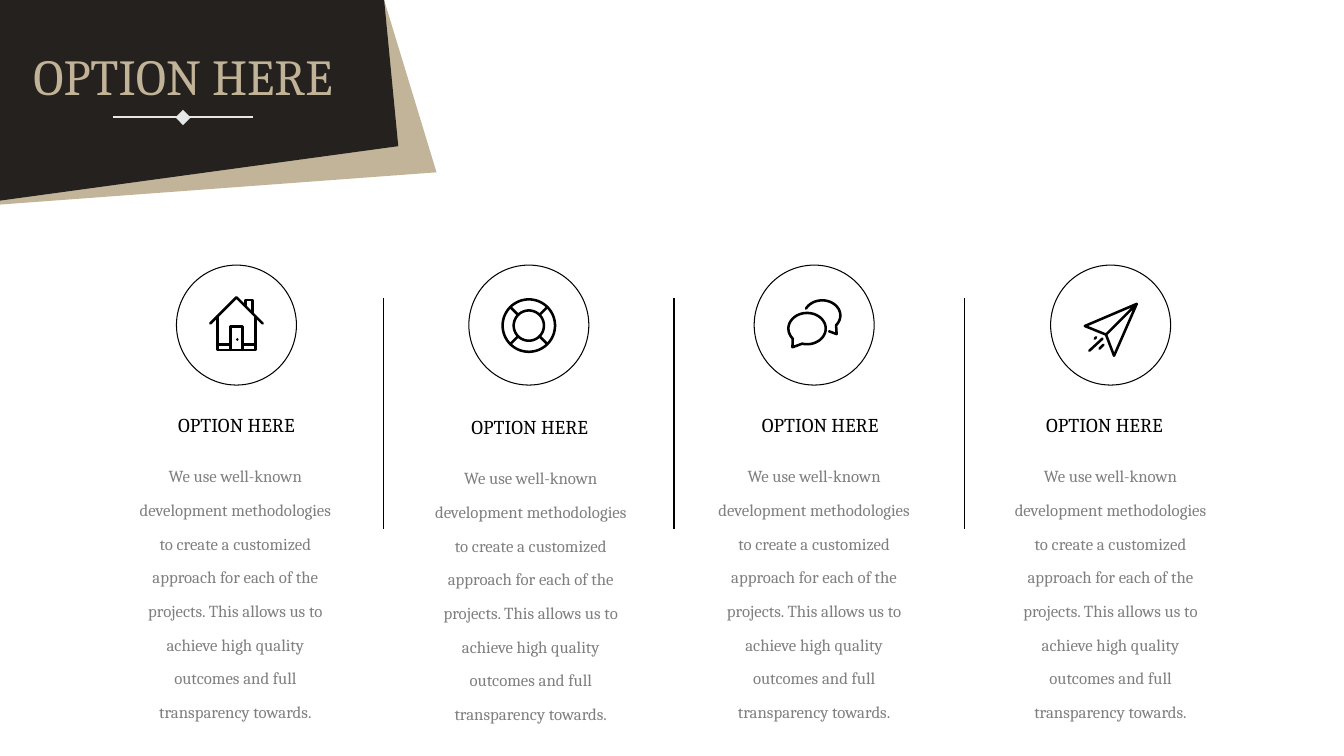
import math

from lxml import etree
from pptx import Presentation
from pptx.dml.color import RGBColor
from pptx.enum.shapes import MSO_CONNECTOR, MSO_SHAPE
from pptx.enum.text import MSO_ANCHOR, PP_ALIGN
from pptx.oxml.ns import qn
from pptx.util import Inches, Pt

STRAIGHT = MSO_CONNECTOR.STRAIGHT
OVAL, DIAMOND = MSO_SHAPE.OVAL, MSO_SHAPE.DIAMOND
TOP, MIDDLE = MSO_ANCHOR.TOP, MSO_ANCHOR.MIDDLE
CENTER = PP_ALIGN.CENTER

# Grid of square cells, 133.3 columns by 75 rows
CELL = Inches(0.1)
COLS, ROWS = 133.3, 75

COLORS = {"white": "FFFFFF", "black": "000000", "dark": "25211E", "sand": "C2B498",
          "title": "C1B397", "pale": "E7E7E7", "grey": "7F7F7F"}
FONT = "Cambria"
HEADING = "OPTION HERE"
BODY = ("We use well-known development methodologies to create a customized approach "
        "for each of the projects. This allows us to achieve high quality outcomes "
        "and full transparency towards.")

TITLE_STYLE = {"size": Pt(36), "color": "title", "anchor": TOP, "inset": 0.2, "spacing": None}
HEADING_STYLE = {"size": Pt(14), "color": "black", "anchor": MIDDLE, "inset": 0.2, "spacing": None}
BODY_STYLE = {"size": Pt(12), "color": "grey", "anchor": TOP, "inset": 0.6, "spacing": 1.67}


def grid(*values):
    return [round(v * CELL) for v in values]


def rgb(name):
    return RGBColor.from_string(COLORS[name])


def arc(cx, cy, rx, ry, start=0, end=360, steps=72):
    """Points along an ellipse, angles clockwise from the right."""
    angles = [math.radians(start + (end - start) * i / steps) for i in range(steps + 1)]
    return [(cx + rx * math.cos(a), cy + ry * math.sin(a)) for a in angles]


def spoke(angle, inner, outer, centre=27):
    c, s = math.cos(math.radians(angle)), math.sin(math.radians(angle))
    return [(centre + r * c, centre + r * s) for r in (inner, outer)]


# Icon strokes, in hundredths of an inch inside a 54 by 54 square
HOUSE = [
    [(1, 27), (27, 1), (53, 27)],
    [(8, 20), (8, 53), (46, 53), (46, 20)],
    [(21, 53), (21, 30), (33, 30), (33, 53)],
    [(36, 9), (36, 3.5), (43, 3.5), (43, 17)],
    [(8, 48), (21, 48)],
    [(33, 48), (46, 48)],
    [(27.8, 43), (28, 43)],
]
LIFEBUOY = [arc(27, 27, r, r) for r in (26, 15)] + [spoke(a, 15, 26) for a in (45, 135, 225, 315)]
front = arc(20, 29, 18.5, 15.5, 140, 465)
BUBBLES = [
    front + [(5.5, 47.5), front[0]],
    arc(35, 16, 18, 15, 207, 400) + [(49.3, 34.5), (41.8, 31.7)],
]
PLANE = [
    [(22.5, 32), (1.5, 23.5), (53, 1.5), (30.5, 53), (22.5, 32), (53, 1.5)],
    [(6, 48), (19, 36)],
    [(16, 46), (20, 42)],
    [(11.3, 36), (12.7, 34.7)],
]

# Column centre, heading centre, text centre, text drop, icon, icon top
OPTIONS = [
    (23.45, 23.45, 23.35, 0, HOUSE, 29.4),
    (52.45, 52.55, 52.65, 0.2, LIFEBUOY, 29.6),
    (80.75, 81.35, 80.75, 0, BUBBLES, 29.7),
    (110.15, 109.55, 110.15, 0, PLANE, 30),
]


def paint(sp, fill=None, line=None, width=0.75):
    sp.shadow.inherit = False
    for part, color in ((sp.fill, fill), (sp.line.fill, line)):
        if color:
            part.solid()
            part.fore_color.rgb = rgb(color)
        else:
            part.background()
    if line:
        sp.line.width = Pt(width)


def add_line(s, x1, y1, x2, y2, color, width):
    cx = s.shapes.add_connector(STRAIGHT, *grid(x1, y1, x2, y2))
    cx.line.color.rgb = rgb(color)
    cx.line.width = Pt(width)
    etree.SubElement(cx._element.spPr, qn("a:effectLst"))


def add_shape(s, kind, x, y, size, **look):
    paint(s.shapes.add_shape(kind, *grid(x, y, size, size)), **look)


def add_outline(s, strokes, close=False, **look):
    builder = None
    for stroke in strokes:
        first, *rest = [grid(*point) for point in stroke]
        if builder is None:
            builder = s.shapes.build_freeform(*first)
        else:
            builder.move_to(*first)
        builder.add_line_segments(rest, close=close)
    sp = builder.convert_to_shape()
    paint(sp, **look)
    return sp


def add_icon(s, strokes, x, y):
    placed = [[(x + px / 10, y + py / 10) for px, py in stroke] for stroke in strokes]
    sp = add_outline(s, placed, line="black", width=1.8)
    ln = sp.line._get_or_add_ln()
    ln.set("cap", "rnd")
    etree.SubElement(ln, qn("a:round"))


def add_text(s, text, x, y, w, h, style):
    tf = s.shapes.add_textbox(*grid(x, y, w, h)).text_frame
    inset = grid(style["inset"])[0]
    frame = {"word_wrap": True, "vertical_anchor": style["anchor"], "margin_left": inset,
             "margin_top": inset, "margin_right": inset, "margin_bottom": inset}
    for name, value in frame.items():
        setattr(tf, name, value)
    p = tf.paragraphs[0]
    p.alignment = CENTER
    p.line_spacing = style["spacing"]
    r = p.add_run()
    r.text = text
    r.font.name, r.font.size = FONT, style["size"]
    r.font.color.rgb = rgb(style["color"])


def add_banner(s):
    add_outline(s, [[(38.1, 0), (0, 0), (0, 20.3), (43.3, 17.1)]], close=True, fill="sand")
    add_outline(s, [[(38.1, 0), (0, 0), (0, 19.9), (39.5, 14.5)]], close=True, fill="dark")
    add_text(s, HEADING, 0.4, 4.3, 35.5, 6.6, TITLE_STYLE)
    add_line(s, 11.2, 11.6, 25.1, 11.6, "pale", 1.5)
    add_shape(s, DIAMOND, 17.4, 10.9, 1.5, fill="pale")


def add_option(s, centre, heading_x, body_x, drop, icon, icon_top):
    add_text(s, BODY, body_x - 10.35, 44.3 + drop, 20.7, 23.6, BODY_STYLE)
    add_text(s, HEADING, heading_x - 7.05, 40.7 + drop, 14.1, 2.9, HEADING_STYLE)
    add_shape(s, OVAL, centre - 5.95, 26.3, 11.9, line="black")
    add_icon(s, icon, centre - 2.7, icon_top)


def main():
    prs = Presentation()
    prs.slide_width, prs.slide_height = grid(COLS, ROWS)
    s = prs.slides.add_slide(prs.slide_layouts[6])
    s.background.fill.solid()
    s.background.fill.fore_color.rgb = rgb("white")

    # Dividers between the four options
    for i in range(3):
        x = 38 + 28.85 * i
        add_line(s, x, 29.6, x, 52.5, "black", 0.75)

    add_banner(s)
    for option in OPTIONS:
        add_option(s, *option)
    prs.save("out.pptx")


if __name__ == "__main__":
    main()
